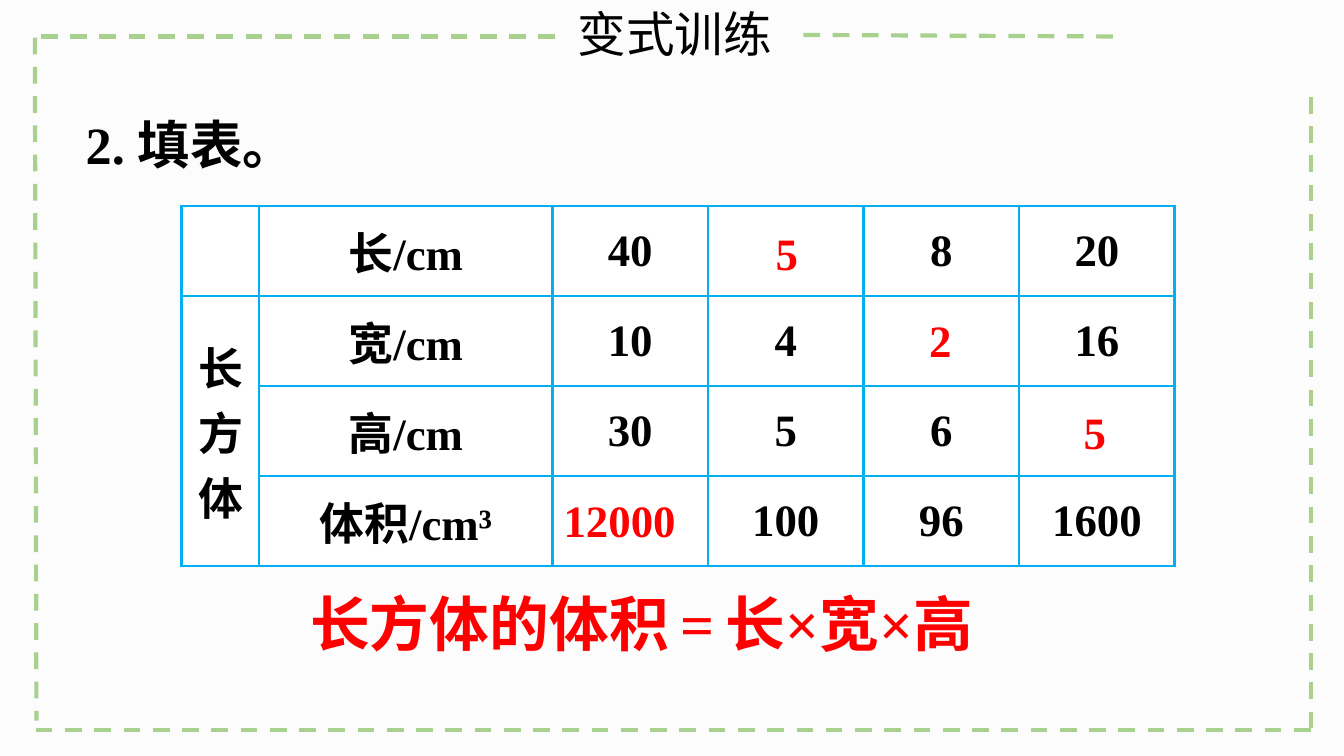
import pptx
import pptx.util
import pptx.dml.color
import pptx.enum.dml
import pptx.enum.shapes
import pptx.enum.text
import pptx.oxml
import pptx.oxml.ns
from lxml import etree

Cm = pptx.util.Cm
Pt = pptx.util.Pt
CENTER = pptx.enum.text.PP_ALIGN.CENTER
MIDDLE = pptx.enum.text.MSO_ANCHOR.MIDDLE
SANS, SERIF = "Noto Sans CJK SC", "Times New Roman"
BLACK, RED, GREEN, BLUE, WHITE = "000000", "FF0000", "A9D18E", "00B0F0", "FFFFFF"

TITLE = {"size": Pt(26), "name": SANS}
HEADING = {"size": Pt(28), "name": SERIF, "bold": True}
ENTRY = {"size": Pt(24), "name": SERIF, "bold": True}
FORMULA = {"size": Pt(32), "name": SERIF, "bold": True}

COLUMN_WIDTHS = [1.47, 5.54] + [2.94] * 4
ROWS = [
    ["", "长/cm", "40", "", "8", "20"],
    ["长\n方\n体", "宽/cm", "10", "4", "", "16"],
    ["", "高/cm", "30", "5", "6", ""],
    ["", "体积/cm³", "", "100", "96", "1600"],
]
ANSWERS = [
    ("12000", (10.39, 9.19, 2.64, 1.27)),
    ("5", (14.4, 4.14, 0.94, 1.27)),
    ("2", (17.3, 5.79, 0.94, 1.27)),
    ("5", (20.22, 7.52, 0.94, 1.27)),
]


def color(value):
    return pptx.dml.color.RGBColor.from_string(value)


def add_span(para, text, style, ink):
    span = para.add_run()
    span.text = text
    for name, value in style.items():
        setattr(span.font, name, value)
    span.font.color.rgb = color(ink)
    return span


def add_text(page, box, spans, style, ink=BLACK, wrap=True, align=None, line_spacing=None):
    """Add one paragraph made of (text, letter spacing in points) spans."""
    frame = page.shapes.add_textbox(*map(Cm, box)).text_frame
    frame.word_wrap = wrap
    para = frame.paragraphs[0]
    para.alignment = align
    para.line_spacing = line_spacing
    for text, spacing in spans:
        span = add_span(para, text, style, ink)
        if spacing:
            span.font._element.set("spc", str(spacing * 100))


def add_dashes(page, start, end):
    line = page.shapes.add_connector(
        pptx.enum.shapes.MSO_CONNECTOR.STRAIGHT, *map(Cm, start + end))
    line.line.color.rgb = color(GREEN)
    line.line.width = Pt(2.25)
    line.line.dash_style = pptx.enum.dml.MSO_LINE.DASH
    etree.SubElement(line._element.spPr, pptx.oxml.ns.qn("a:effectLst"))


def add_frame(page, left, top, width, height):
    """Draw the dashed border, open around the title and at the top right corner."""
    right, bottom = left + width, top + height
    add_dashes(page, (left - 0.03, top + 0.02), (left, bottom - 0.18))
    add_dashes(page, (right, top + 1.14), (right, bottom))
    add_dashes(page, (right, bottom), (left, bottom))
    add_dashes(page, (left + 20.34, top), (left + 14.35, top - 0.03))
    add_dashes(page, (left + 9.8, top), (left, top))


def add_borders(cell):
    properties = cell._tc.get_or_add_tcPr()
    for index, side in enumerate(("lnL", "lnR", "lnT", "lnB")):
        properties.insert(index, pptx.oxml.parse_xml(
            f'<a:{side} {pptx.oxml.ns.nsdecls("a")} w="{Pt(1.5)}"><a:solidFill>'
            f'<a:srgbClr val="{BLUE}"/></a:solidFill></a:{side}>'))


def fill_cell(cell, text):
    cell.fill.solid()
    cell.fill.fore_color.rgb = color(WHITE)
    add_borders(cell)
    cell.vertical_anchor = MIDDLE
    if not text:
        return
    for index, line in enumerate(text.split("\n")):
        frame = cell.text_frame
        para = frame.add_paragraph() if index else frame.paragraphs[0]
        para.alignment = CENTER
        add_span(para, line, ENTRY, BLACK)


def add_cuboid_table(page, box):
    table = page.shapes.add_table(len(ROWS), len(COLUMN_WIDTHS), *map(Cm, box)).table
    table.first_row = table.horz_banding = False
    for column, width in zip(table.columns, COLUMN_WIDTHS):
        column.width = Cm(width)
    for row_index, texts in enumerate(ROWS):
        for column_index, text in enumerate(texts):
            fill_cell(table.cell(row_index, column_index), text)
    table.cell(1, 0).merge(table.cell(3, 0))


def main():
    deck = pptx.Presentation()
    deck.slide_width, deck.slide_height = Cm(25.4), Cm(14.28)
    page = deck.slides.add_slide(deck.slide_layouts[6])
    page.background.fill.solid()
    page.background.fill.fore_color.rgb = color("FCFCFC")

    add_frame(page, 0.69, 0.69, 24.08, 13.1)
    add_text(page, (10.67, -0.05, 4.39, 1.37), [("变式训练", 0)], TITLE)
    add_text(page, (1.37, 1.75, 13.34, 1.7), [("2. 填表。", 0)], HEADING, line_spacing=1.2)
    add_cuboid_table(page, (3.43, 3.89, 18.77, 6.8))
    for text, box in ANSWERS:
        add_text(page, box, [(text, 0)], ENTRY, RED, wrap=False, align=CENTER)
    add_text(page, (5.61, 10.95, 15.75, 1.63),
             [("长方体的体", 0), ("积=", 6), ("长×宽×高", 0)], FORMULA, RED)
    deck.save("out.pptx")


if __name__ == "__main__":
    main()
